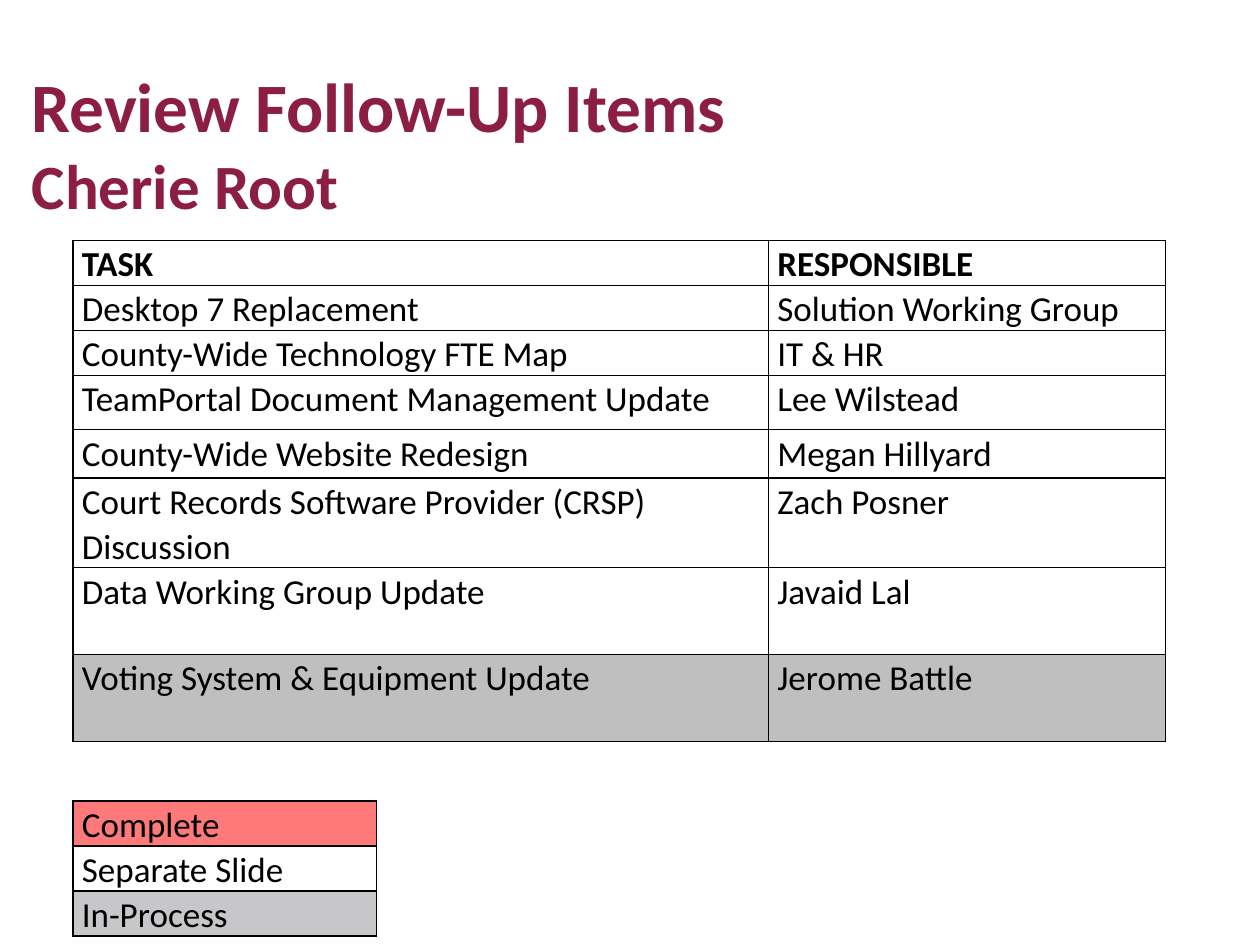
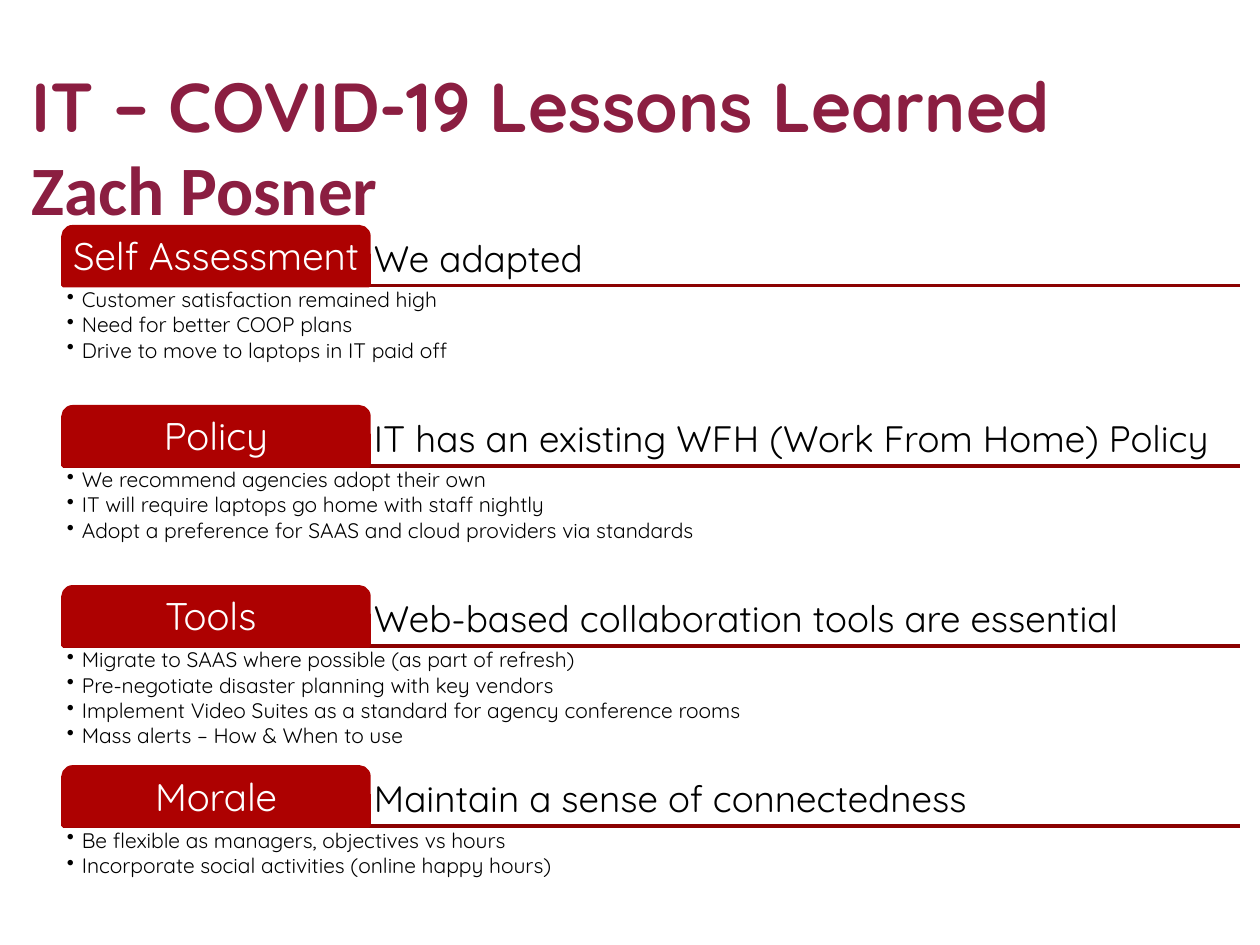
from dataclasses import dataclass
from typing import Any

from pptx import Presentation
from pptx.dml.color import RGBColor
from pptx.enum.shapes import MSO_CONNECTOR as Link, MSO_SHAPE as Shape
from pptx.enum.text import MSO_ANCHOR as Anchor, PP_ALIGN as Align
from pptx.oxml.xmlchemy import OxmlElement as Element
from pptx.util import Cm, Pt

WINE, RED, DARK = "8B1E41", "AD0101", "8B0101"
BLACK, WHITE, GRAY, SILVER, PINK = "000000", "FFFFFF", "BFBFBF", "C7C7CA", "FE7979"
PLAIN, ROUND = "Calibri", "Quicksand"

LEFT, TAB_W, TAB_H, RIGHT = 1.27, 6.17, 1.19, 24.99
TOP, PITCH, BODY_H = 4.57, 3.63, 2.39


@dataclass
class Run:
    text: str
    face: str
    size: float
    color: str = BLACK
    bold: bool = False


@dataclass
class Row:
    cells: list[str]
    height: float
    fill: str = WHITE
    bold: bool = False


@dataclass
class Lesson:
    label: str
    claim: str
    points: list[str]


TASKS = [
    Row(["TASK", "RESPONSIBLE"], 0.86, bold=True),
    Row(["Desktop 7 Replacement", "Solution Working Group"], 0.86),
    Row(["County-Wide Technology FTE Map", "IT & HR"], 0.86),
    Row(["TeamPortal Document Management Update", "Lee Wilstead"], 1.09),
    Row(["County-Wide Website Redesign", "Megan Hillyard"], 0.97),
    Row(["Court Records Software Provider (CRSP) Discussion", "Zach Posner"], 1.75),
    Row(["Data Working Group Update", "Javaid Lal"], 1.75),
    Row(["Voting System & Equipment Update", "Jerome Battle"], 1.75, GRAY),
]
LEGEND = [
    Row(["Complete"], 0.79, PINK),
    Row(["Separate Slide"], 0.79),
    Row(["In-Process"], 0.79, SILVER),
]
LESSONS = [
    Lesson("Self Assessment", "We adapted", [
        "Customer satisfaction remained high",
        "Need for better COOP plans",
        "Drive to move to laptops in IT paid off",
    ]),
    Lesson("Policy", "IT has an existing WFH (Work From Home) Policy", [
        "We recommend agencies adopt their own",
        "IT will require laptops go home with staff nightly",
        "Adopt a preference for SAAS and cloud providers via standards",
    ]),
    Lesson("Tools ", "Web-based collaboration tools are essential", [
        "Migrate to SAAS where possible (as part of refresh)",
        "Pre-negotiate disaster planning with key vendors",
        "Implement Video Suites as a standard for agency conference rooms",
        "Mass alerts – How & When to use",
    ]),
    Lesson("Morale", "Maintain a sense of connectedness", [
        "Be flexible as managers, objectives vs hours",
        "Incorporate social activities (online happy hours)",
    ]),
]


def rgb(color: str) -> RGBColor:
    return RGBColor.from_string(color)


def assign(target: Any, form: dict[str, Any]) -> None:
    for name, value in form.items():
        setattr(target, name, value)


def pads(left: float, top: float, right: float, bottom: float) -> dict[str, Any]:
    sides = ("left", "top", "right", "bottom")
    return {f"margin_{side}": Cm(gap) for side, gap in zip(sides, (left, top, right, bottom))}


def paint(target: Any, color: str) -> None:
    target.fill.solid()
    target.fill.fore_color.rgb = rgb(color)


def write(para: Any, run: Run) -> None:
    part = para.add_run()
    part.text = run.text
    assign(part.font, {"name": run.face, "size": Pt(run.size), "bold": run.bold})
    part.font.color.rgb = rgb(run.color)


def add_box(slide: Any, at: tuple[float, ...], form: dict[str, Any]) -> Any:
    frame = slide.shapes.add_textbox(*map(Cm, at)).text_frame
    assign(frame, {"word_wrap": True} | form)
    return frame


def add_title(slide: Any, head: Run, name: Run) -> None:
    para = add_box(slide, (0.64, 1.27, 22.86, 1.9), pads(0, 0, 0, 0)).paragraphs[0]
    write(para, head)
    para.add_line_break()
    write(para, name)


def add_edges(cell: Any) -> None:
    """Draw a thin black border on all four sides of a cell."""
    props = cell._tc.get_or_add_tcPr()
    for place, side in enumerate(("lnL", "lnR", "lnT", "lnB")):
        edge = Element(f"a:{side}")
        edge.set("w", str(Pt(1)))
        fill, tint = Element("a:solidFill"), Element("a:srgbClr")
        tint.set("val", BLACK)
        fill.append(tint)
        edge.append(fill)
        props.insert(place, edge)


def add_grid(slide: Any, top: float, widths: list[float], rows: list[Row]) -> None:
    height = sum(row.height for row in rows)
    spot = map(Cm, (1.47, top, sum(widths), height))
    table = slide.shapes.add_table(len(rows), len(widths), *spot).table
    assign(table, {"first_row": False, "horz_banding": False})
    for column, width in zip(table.columns, widths):
        column.width = Cm(width)
    for line, row in zip(table.rows, rows):
        line.height = Cm(row.height)
        for cell, text in zip(line.cells, row.cells):
            assign(cell, pads(0.18, 0, 0.18, 0))
            paint(cell, row.fill)
            add_edges(cell)
            para = cell.text_frame.paragraphs[0]
            para.line_spacing = 1.07
            write(para, Run(text, PLAIN, 20, bold=row.bold))


def add_rule(slide: Any, top: float) -> None:
    rule = slide.shapes.add_connector(Link.STRAIGHT, *map(Cm, (LEFT, top, RIGHT, top)))
    rule.line.width = Pt(2)
    rule.line.color.rgb = rgb(DARK)
    rule._element.spPr.append(Element("a:effectLst"))


def add_tab(slide: Any, top: float, label: str) -> None:
    tab = slide.shapes.add_shape(Shape.ROUND_2_SAME_RECTANGLE, *map(Cm, (LEFT, top, TAB_W, TAB_H)))
    tab.shadow.inherit = False
    paint(tab, RED)
    tab.line.width = Pt(2)
    tab.line.color.rgb = rgb(RED)
    frame = tab.text_frame
    assign(frame, {"word_wrap": True, "vertical_anchor": Anchor.MIDDLE} | pads(0.1, 0.13, 0.1, 0.1))
    para = frame.paragraphs[0]
    assign(para, {"alignment": Align.CENTER, "line_spacing": 0.9})
    write(para, Run(label, ROUND, 22, WHITE))


def add_bullet(para: Any) -> None:
    props = para._p.get_or_add_pPr()
    props.set("marL", str(Cm(0.3)))
    props.set("indent", str(-Cm(0.3)))
    mark = Element("a:buChar")
    mark.set("char", "•")
    props.append(mark)


def add_lesson(slide: Any, top: float, lesson: Lesson) -> None:
    base, side = top + TAB_H, LEFT + TAB_W
    add_rule(slide, base)
    add_tab(slide, top, lesson.label)

    form = {"vertical_anchor": Anchor.BOTTOM} | pads(0.1, 0.1, 0.1, 0.1)
    claim = add_box(slide, (side, top, RIGHT - side, TAB_H), form).paragraphs[0]
    claim.line_spacing = 0.9
    write(claim, Run(lesson.claim, ROUND, 21))

    body = add_box(slide, (LEFT, base, RIGHT - LEFT, BODY_H), pads(0.08, 0.08, 0.08, 0.08))
    for place, point in enumerate(lesson.points):
        para = body.add_paragraph() if place else body.paragraphs[0]
        add_bullet(para)
        assign(para, {"line_spacing": 0.9, "space_after": Pt(1.4)})
        write(para, Run(point, ROUND, 12))


def main() -> None:
    deck = Presentation()
    assign(deck, {"slide_width": Cm(25.4), "slide_height": Cm(19.05)})
    blank = deck.slide_layouts[6]

    review = deck.slides.add_slide(blank)
    add_title(review, Run("Review Follow-Up Items", PLAIN, 39.6, WINE, True),
              Run("Cherie Root", PLAIN, 36, WINE, True))
    add_grid(review, 4.85, [14.02, 8], TASKS)
    add_grid(review, 16.15, [6.12], LEGEND)

    learned = deck.slides.add_slide(blank)
    for place, lesson in enumerate(LESSONS):
        add_lesson(learned, TOP + place * PITCH, lesson)
    add_title(learned, Run("IT – COVID-19 Lessons Learned", ROUND, 39.6, WINE, True),
              Run("Zach Posner", PLAIN, 39.6, WINE, True))

    deck.save("out.pptx")


if __name__ == "__main__":
    main()
